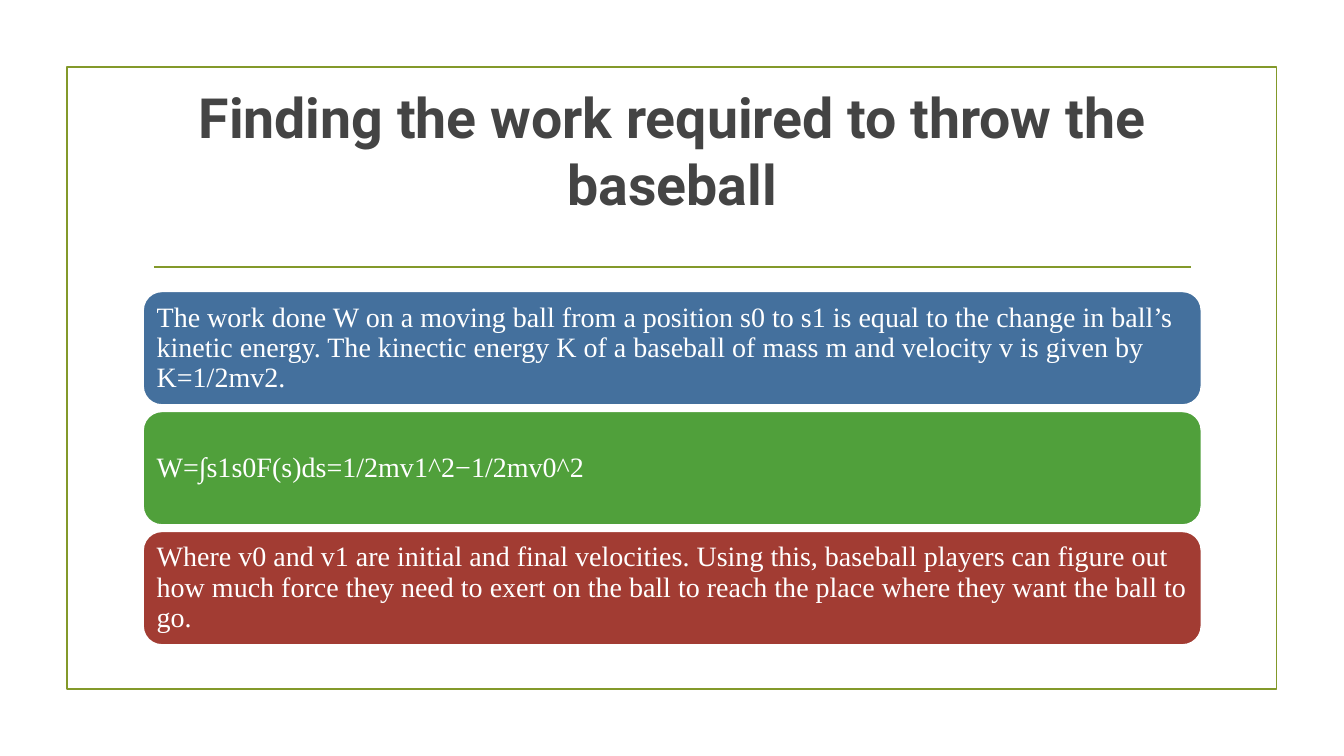
from pptx import Presentation
from pptx.dml.color import RGBColor
from pptx.enum import shapes, text
from pptx.oxml.ns import qn
from pptx.util import Pt
from lxml import etree

OLIVE = RGBColor(0x83, 0x99, 0x2A)
CHARCOAL = RGBColor(0x44, 0x44, 0x44)
WHITE = RGBColor(0xFF, 0xFF, 0xFF)
BLUE = RGBColor(0x44, 0x70, 0x9D)
GREEN = RGBColor(0x50, 0xA0, 0x3B)
RED = RGBColor(0xA2, 0x3C, 0x33)

LEFT, WIDTH = 102.2, 756
CARD_TOP, CARD_HEIGHT, CARD_PITCH = 208.1, 81.2, 85.7
CARDS = [
    (BLUE, "The work done W on a moving ball from a position s0 to s1 is equal to "
           "the change in ball’s kinetic energy. The kinectic energy K of a baseball "
           "of mass m and velocity v is given by K=1/2mv2."),
    (GREEN, "W=∫s1s0F(s)ds=1/2mv1^2−1/2mv0^2"),
    (RED, "Where v0 and v1 are initial and final velocities. Using this, baseball "
          "players can figure out how much force they need to exert on the ball to "
          "reach the place where they want the ball to go."),
]

prs = Presentation()
prs.slide_width, prs.slide_height = Pt(960), Pt(540)
slide = prs.slides.add_slide(prs.slide_layouts[6])

border = slide.shapes.add_shape(
    shapes.MSO_SHAPE.RECTANGLE, Pt(47.8), Pt(48), Pt(864), Pt(444))
border.shadow.inherit = False
border.fill.background()
border.line.color.rgb = OLIVE
border.line.width = Pt(1.25)

divider = slide.shapes.add_connector(
    shapes.MSO_CONNECTOR.STRAIGHT, Pt(110), Pt(190.8), Pt(850.4), Pt(190.8))
divider.line.color.rgb = OLIVE
divider.line.width = Pt(1.25)
etree.SubElement(divider._element.spPr, qn("a:effectLst"))

title = slide.shapes.add_textbox(Pt(LEFT), Pt(59), Pt(WIDTH), Pt(96)).text_frame
title.word_wrap = True
title.vertical_anchor = text.MSO_ANCHOR.MIDDLE
title.margin_top = title.margin_bottom = 0
heading = title.paragraphs[0]
heading.text = "Finding the work required to throw the baseball"
heading.alignment = text.PP_ALIGN.CENTER
heading.line_spacing = Pt(48)
heading.font.name = "Roboto"
heading.font.size = Pt(39.6)
heading.font.bold = True
heading.font.color.rgb = CHARCOAL

for row, (color, statement) in enumerate(CARDS):
    card = slide.shapes.add_shape(
        shapes.MSO_SHAPE.ROUNDED_RECTANGLE,
        Pt(LEFT), Pt(CARD_TOP + row * CARD_PITCH), Pt(WIDTH), Pt(CARD_HEIGHT))
    card.shadow.inherit = False
    card.fill.solid()
    card.fill.fore_color.rgb = color
    card.line.color.rgb = WHITE
    card.line.width = Pt(1.25)
    frame = card.text_frame
    frame.word_wrap = True
    frame.vertical_anchor = text.MSO_ANCHOR.MIDDLE
    frame.margin_left = frame.margin_right = Pt(5.8)
    frame.margin_top = frame.margin_bottom = Pt(5.8)
    body = frame.paragraphs[0]
    body.text = statement
    body.alignment = text.PP_ALIGN.LEFT
    body.line_spacing = 0.9
    body.font.name = "Times New Roman"
    body.font.size = Pt(20)
    body.font.color.rgb = WHITE

prs.save("out.pptx")
